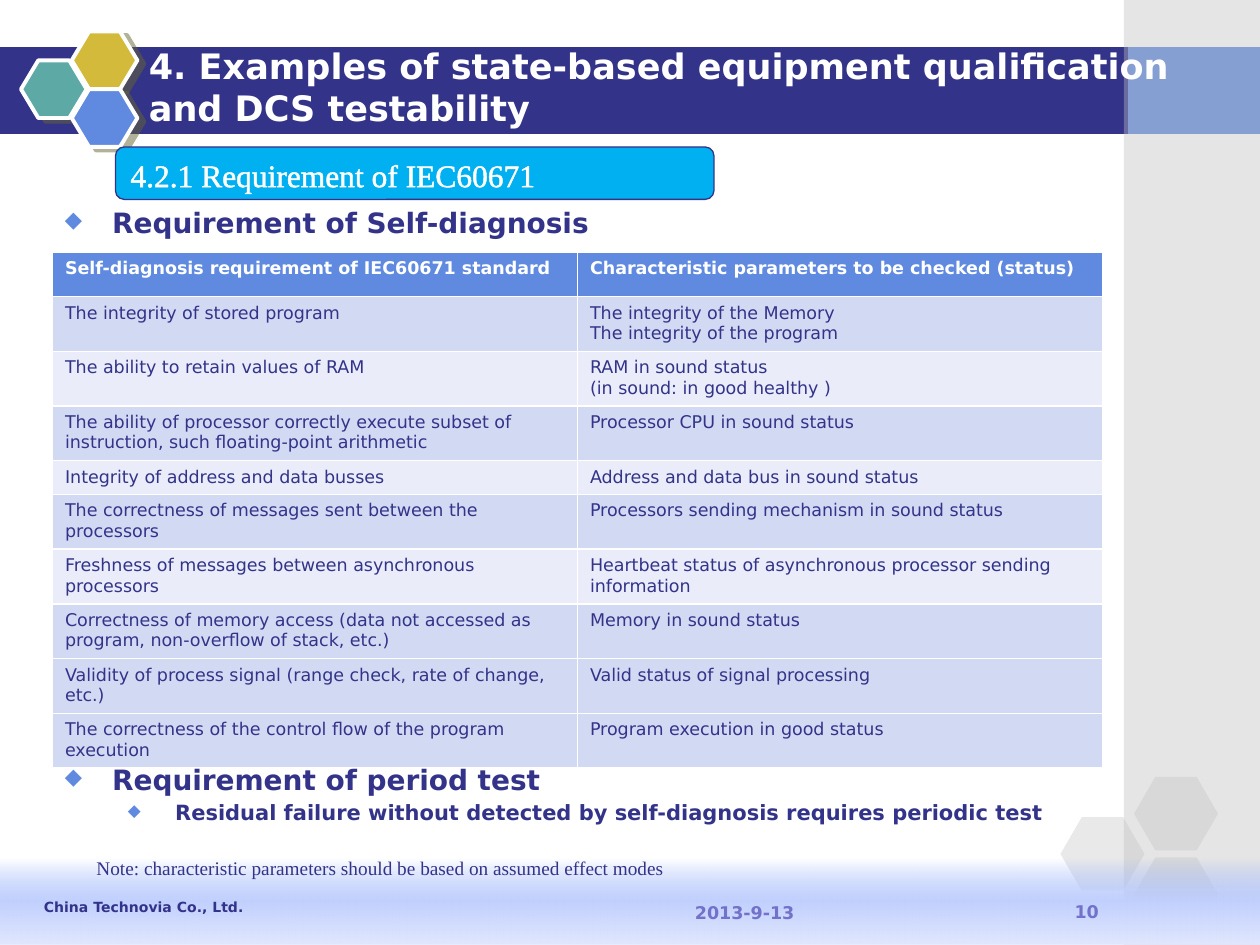
from lxml.etree import SubElement
from pptx import Presentation
from pptx.dml.color import RGBColor
from pptx.enum.shapes import MSO_SHAPE
from pptx.enum.text import MSO_ANCHOR, PP_ALIGN
from pptx.oxml import parse_xml
from pptx.oxml.ns import qn
from pptx.util import Pt

HUES = {
    "navy": "333389", "blue": "5F8ADF", "teal": "5DA9A5", "gold": "D4BA3A",
    "gray": "C0C0C0", "white": "FFFFFF", "sky": "00B0F0", "lilac": "7272CB",
    "dark": "D2DAF3", "pale": "EAEDF9", "shade": "666633",
    "glow": "9AB4FD", "mist": "C1D0FD", "haze": "E1E7FD",
}
SANS, SERIF = "DejaVu Sans", "Times New Roman"
SPACE = "http://schemas.openxmlformats.org/drawingml/2006/main"
ROWS = [
    ("Self-diagnosis requirement of IEC60671 standard",
     "Characteristic parameters to be checked (status)", "blue", 25.5),
    ("The integrity of stored program",
     "The integrity of the Memory\nThe integrity of the program", "dark", 28),
    ("The ability to retain values of RAM",
     "RAM in sound status\n(in sound: in good healthy )", "pale", 21),
    ("The ability of processor correctly execute subset of instruction, such floating-point arithmetic",
     "Processor CPU in sound status", "dark", 18),
    ("Integrity of address and data busses",
     "Address and data bus in sound status", "pale", 16.5),
    ("The correctness of messages sent between the processors",
     "Processors sending mechanism in sound status", "dark", 21.5),
    ("Freshness of messages between asynchronous processors",
     "Heartbeat status of asynchronous processor sending information", "pale", 26),
    ("Correctness of memory access (data not accessed as program, non-overflow of stack, etc.)",
     "Memory in sound status", "dark", 26),
    ("Validity of process signal (range check, rate of change, etc.)",
     "Valid status of signal processing", "dark", 28),
    ("The correctness of the control flow of the program execution",
     "Program execution in good status", "dark", 26),
]


def color(name):
    """Return the named colour."""
    return RGBColor.from_string(HUES[name])


def add_run(para, text, size, hue, bold=False, font=SANS):
    """Add one styled run to a paragraph."""
    run = para.add_run()
    run.text = text
    run.font.size, run.font.bold, run.font.name = Pt(size), bold, font
    run.font.color.rgb = color(hue)
    return run


def add_form(slide, kind, box, hue, alpha=100):
    """Add a filled preset shape without line or shadow."""
    form = slide.shapes.add_shape(kind, *map(Pt, box))
    form.shadow.inherit = False
    form.line.fill.background()
    form.fill.solid()
    form.fill.fore_color.rgb = color(hue)
    if alpha < 100:
        tone = next(form._element.spPr.iter(qn("a:srgbClr")))
        SubElement(tone, qn("a:alpha")).set("val", str(alpha * 1000))
    return form


def add_frame(slide, box):
    """Add a wrapped text box and return its text frame."""
    frame = slide.shapes.add_textbox(*map(Pt, box)).text_frame
    frame.word_wrap = True
    return frame


def add_label(slide, box, text, size, hue, bold=True, font=SANS, align=PP_ALIGN.LEFT):
    """Add a text box that holds one run."""
    frame = add_frame(slide, box)
    frame.paragraphs[0].alignment = align
    add_run(frame.paragraphs[0], text, size, hue, bold, font)
    return frame


def add_bands(slide, box):
    """Place the title bands and the side strip."""
    x, y, w, h = box
    add_form(slide, MSO_SHAPE.RECTANGLE, (x + 75, y + 27, w - 75, 49.5), "blue")
    add_form(slide, MSO_SHAPE.RECTANGLE, (x, y + 27, w - 75.5, 49.5), "navy")
    add_form(slide, MSO_SHAPE.RECTANGLE, (x + w - 77.75, y, 77.75, h), "gray", 40)


def add_cluster(slide, box, cell, hues, bend, alpha=100, rim=False):
    """Place three hexagons, one at the left and two stacked at the right."""
    x, y, w, h = box
    wide, high = cell
    spots = [(0, (h - high) / 2), (w - wide, 0), (w - wide, h - high)]
    for (dx, dy), hue in zip(spots, hues):
        form = add_form(slide, MSO_SHAPE.HEXAGON, (x + dx, y + dy, wide, high), hue, alpha)
        form.adjustments[0] = bend
        if rim:
            form.line.color.rgb = color("white")
            form.line.width = Pt(2.25)
            glow = form._element.spPr.find(qn("a:effectLst"))
            cast = SubElement(glow, qn("a:outerShdw"), dist=str(Pt(4.5)),
                              dir=str(27 * 60000), algn="ctr", rotWithShape="0")
            tone = SubElement(cast, qn("a:srgbClr"), val=HUES["shade"])
            SubElement(tone, qn("a:alpha"), val="50000")


def add_footer(slide, box):
    """Place the fading strip with firm, date and page number."""
    x, y, w, h = box
    strip = add_form(slide, MSO_SHAPE.RECTANGLE, box, "mist")
    stops = "".join(
        f'<a:gs pos="{pos}"><a:srgbClr val="{HUES[hue]}"><a:alpha val="{alpha}"/></a:srgbClr></a:gs>'
        for pos, hue, alpha in [(0, "glow", 0), (50000, "mist", 100000), (100000, "haze", 100000)])
    fade = parse_xml(f'<a:gradFill xmlns:a="{SPACE}" rotWithShape="1"><a:gsLst>{stops}</a:gsLst>'
                     '<a:lin ang="5400000" scaled="1"/></a:gradFill>')
    props = strip._element.spPr
    props.replace(props.find(qn("a:solidFill")), fade)
    add_label(slide, (x + 390, y + 21.5, 198, 18), "2013-9-13", 10, "lilac")
    add_label(slide, (x + 600, y + 21, 42, 21), "10", 10, "lilac", align=PP_ALIGN.CENTER)
    add_label(slide, (x + 18, y + 19.5, 258, 17.5), "China Technovia Co., Ltd.", 8, "navy")
    add_label(slide, (x + 48, y - 4.5, 505.5, 21),
              "Note: characteristic parameters should be based on assumed effect modes",
              11, "navy", False, SERIF)


def add_points(slide, box, items):
    """Place bulleted lines given as text, size and level."""
    frame = add_frame(slide, box)
    for num, (text, size, level) in enumerate(items):
        para = frame.add_paragraph() if num else frame.paragraphs[0]
        para.level = level
        para.space_before = Pt(size * 0.2)
        props = para._p.get_or_add_pPr()
        props.set("marL", str(Pt(27 + 36 * level)))
        props.set("indent", str(-Pt(27)))
        SubElement(SubElement(props, qn("a:buClr")), qn("a:srgbClr"), val=HUES["blue"])
        SubElement(props, qn("a:buSzPct"), val="80000")
        SubElement(props, qn("a:buChar"), char="◆")
        add_run(para, text, size, "navy", True)


def add_title(slide, box):
    """Place the slide title."""
    title = add_label(slide, box,
                      "4. Examples of state-based equipment qualification and DCS testability",
                      20, "white")
    title.margin_top = 0


def add_tag(slide, box):
    """Place the section tag."""
    tag = add_form(slide, MSO_SHAPE.ROUNDED_RECTANGLE, box, "sky")
    tag.line.color.rgb = color("navy")
    tag.line.width = Pt(0.75)
    tag.text_frame.vertical_anchor = MSO_ANCHOR.TOP
    para = tag.text_frame.paragraphs[0]
    para.alignment = PP_ALIGN.LEFT
    para.space_before = Pt(3.6)
    run = add_run(para, "4.2.1 Requirement of IEC60671", 18, "white", font=SERIF)
    edge = parse_xml(f'<a:ln xmlns:a="{SPACE}" w="{Pt(1.45)}"><a:solidFill>'
                     f'<a:srgbClr val="{HUES["white"]}"/></a:solidFill></a:ln>')
    run._r.get_or_add_rPr().insert(0, edge)


def add_grid(slide, box):
    """Place the table of checks, whose rows grow to fit their text."""
    holder = slide.shapes.add_table(len(ROWS), 2, *map(Pt, box))
    grid = holder.table
    for r, (left, right, hue, high) in enumerate(ROWS):
        grid.rows[r].height = Pt(high)
        for c, text in enumerate((left, right)):
            cell = grid.cell(r, c)
            cell.fill.solid()
            cell.fill.fore_color.rgb = color(hue)
            frame = cell.text_frame
            for num, line in enumerate(text.split("\n")):
                para = frame.add_paragraph() if num else frame.paragraphs[0]
                add_run(para, line, 10, "navy" if r else "white", r == 0)
    holder.height = Pt(box[3])


def main():
    """Build and save the slide."""
    deck = Presentation()
    deck.slide_width, deck.slide_height = Pt(720), Pt(540)
    slide = deck.slides.add_slide(deck.slide_layouts[6])
    add_bands(slide, (0, 0, 720, 540))
    add_cluster(slide, (12, 18, 66.5, 66), (37.5, 33), ("teal", "gold", "blue"), 0.3, rim=True)
    add_cluster(slide, (606, 444, 90, 88), (48, 42), ["gray"] * 3, 0.29, alpha=35)
    add_footer(slide, (0, 490.5, 720, 49.5))
    add_points(slide, (30, 114, 594, 48), [("Requirement of Self-diagnosis", 16, 0)])
    add_grid(slide, (30, 144, 600, 288))
    add_points(slide, (30, 432, 594, 60), [
        ("Requirement of period test", 16, 0),
        ("Residual failure without detected by self-diagnosis requires periodic test", 12, 1)])
    add_tag(slide, (66, 84, 342, 30))
    add_title(slide, (78, 25.25, 612, 58))
    deck.save("out.pptx")


if __name__ == "__main__":
    main()
